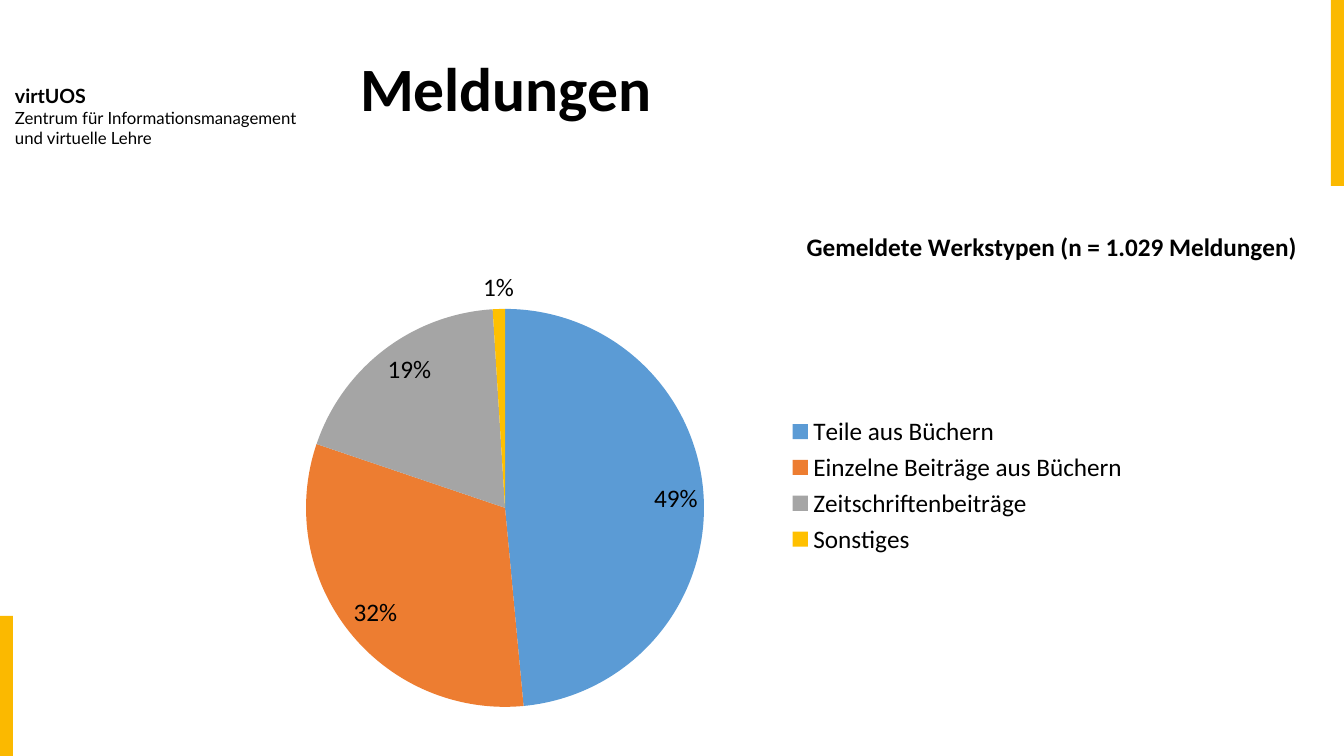
from dataclasses import dataclass

import pptx
import pptx.chart.chart
import pptx.chart.data
import pptx.dml.color
import pptx.enum.chart
import pptx.enum.shapes
import pptx.enum.text
import pptx.oxml
import pptx.oxml.ns
import pptx.slide
import pptx.util

EMU_PER_PX = 914400 / 100.8
BLACK = pptx.dml.color.RGBColor(0x00, 0x00, 0x00)
ACCENT = pptx.dml.color.RGBColor(0xFB, 0xB9, 0x00)
BLUE = pptx.dml.color.RGBColor(0x5B, 0x9B, 0xD5)
ORANGE = pptx.dml.color.RGBColor(0xED, 0x7D, 0x31)
GRAY = pptx.dml.color.RGBColor(0xA5, 0xA5, 0xA5)
YELLOW = pptx.dml.color.RGBColor(0xFF, 0xC0, 0x00)


@dataclass(frozen=True)
class Box:
    left: int
    top: int
    width: int
    height: int

    def emu(self) -> list[pptx.util.Emu]:
        return [px(v) for v in (self.left, self.top, self.width, self.height)]


@dataclass(frozen=True)
class WorkType:
    label: str
    share: float
    color: pptx.dml.color.RGBColor


WORK_TYPES = [
    WorkType("Teile aus Büchern", 0.49, BLUE),
    WorkType("Einzelne Beiträge aus Büchern", 0.32, ORANGE),
    WorkType("Zeitschriftenbeiträge", 0.19, GRAY),
    WorkType("Sonstiges", 0.01, YELLOW),
]
ACCENT_BARS = [Box(1331, 0, 13, 186), Box(0, 616, 13, 140)]
HEADING = Box(350, 19, 948, 146)
DEPARTMENT = Box(5, 79, 345, 75)
CHART = Box(49, 198, 1265, 523)
PIE = Box(306, 309, 398, 398)
PIE_TITLE = Box(802, 225, 0, 0)
LEGEND = Box(785, 411, 345, 149)


def px(value: int) -> pptx.util.Emu:
    return pptx.util.Emu(round(value * EMU_PER_PX))


def style_font(font, *, size: int, bold: bool = False, name: str = "Calibri") -> None:
    font.size = pptx.util.Pt(size)
    font.bold = bold
    font.name = name
    font.color.rgb = BLACK


def write(paragraph, text: str, *, line_spacing: float = 1.0, **font_format) -> None:
    paragraph.text = text
    paragraph.alignment = pptx.enum.text.PP_ALIGN.LEFT
    paragraph.line_spacing = line_spacing
    for run in paragraph.runs:
        style_font(run.font, **font_format)


def draw_accent_bar(slide: pptx.slide.Slide, box: Box) -> None:
    bar = slide.shapes.add_shape(pptx.enum.shapes.MSO_SHAPE.RECTANGLE, *box.emu())
    bar.shadow.inherit = False
    bar.fill.solid()
    bar.fill.fore_color.rgb = ACCENT
    bar.line.fill.background()


def draw_department(slide: pptx.slide.Slide) -> None:
    department = slide.shapes.add_textbox(*DEPARTMENT.emu()).text_frame
    department.word_wrap = True
    write(department.paragraphs[0], "virtUOS", size=14, bold=True, name="Lato")
    write(department.add_paragraph(),
          "Zentrum für Informationsmanagement\vund virtuelle Lehre", size=12, name="Lato")


def draw_heading(slide: pptx.slide.Slide) -> None:
    heading = slide.shapes.title
    heading.left, heading.top, heading.width, heading.height = HEADING.emu()
    frame = heading.text_frame
    frame.word_wrap = True
    frame.auto_size = pptx.enum.text.MSO_AUTO_SIZE.NONE
    frame.vertical_anchor = pptx.enum.text.MSO_ANCHOR.MIDDLE
    write(frame.paragraphs[0], "Meldungen", line_spacing=0.9, size=44, bold=True)


def place_in_chart(chart: pptx.chart.chart.Chart, tag: str, box: Box, index: int) -> None:
    part = chart._chartSpace.xpath(f".//{tag}")[0]
    for old_layout in part.xpath("./c:layout"):
        part.remove(old_layout)
    fractions = {
        "x": (box.left - CHART.left) / CHART.width,
        "y": (box.top - CHART.top) / CHART.height,
    }
    if box.width:
        fractions |= {"w": box.width / CHART.width, "h": box.height / CHART.height}
    target = '<c:layoutTarget val="inner"/>' if tag == "c:plotArea" else ""
    values = "".join(f'<c:{key} val="{value:.4f}"/>' for key, value in fractions.items())
    part.insert(index, pptx.oxml.parse_xml(
        f'<c:layout {pptx.oxml.ns.nsdecls("c")}><c:manualLayout>{target}'
        f'<c:xMode val="edge"/><c:yMode val="edge"/>{values}</c:manualLayout></c:layout>'))


def draw_work_types(slide: pptx.slide.Slide) -> None:
    shares = pptx.chart.data.CategoryChartData(number_format="0%")
    shares.categories = [work.label for work in WORK_TYPES]
    shares.add_series("Series 1", [work.share for work in WORK_TYPES])
    chart = slide.shapes.add_chart(
        pptx.enum.chart.XL_CHART_TYPE.PIE, *CHART.emu(), shares).chart
    style_font(chart.font, size=18)

    chart.has_title = True
    write(chart.chart_title.text_frame.paragraphs[0],
          "Gemeldete Werkstypen (n = 1.029 Meldungen)", size=18, bold=True)

    chart.has_legend = True
    chart.legend.position = pptx.enum.chart.XL_LEGEND_POSITION.RIGHT
    chart.legend.include_in_layout = False
    style_font(chart.legend.font, size=18)

    pie = chart.plots[0]
    pie.vary_by_categories = True
    series = pie.series[0]
    for index, work in enumerate(WORK_TYPES):
        fill = series.points[index].format.fill
        fill.solid()
        fill.fore_color.rgb = work.color

    labels = series.data_labels
    labels.show_value = True
    labels.show_percentage = False
    labels.number_format = "0%"
    labels.number_format_is_linked = False
    labels.position = pptx.enum.chart.XL_LABEL_POSITION.INSIDE_END
    style_font(labels.font, size=18)
    smallest = series.points[len(WORK_TYPES) - 1].data_label
    style_font(smallest.font, size=18)
    smallest.position = pptx.enum.chart.XL_LABEL_POSITION.OUTSIDE_END

    place_in_chart(chart, "c:plotArea", PIE, 0)
    place_in_chart(chart, "c:title", PIE_TITLE, 1)
    place_in_chart(chart, "c:legend", LEGEND, 1)


def main() -> None:
    presentation = pptx.Presentation()
    presentation.slide_width = px(1344)
    presentation.slide_height = px(756)
    slide = presentation.slides.add_slide(presentation.slide_layouts[5])
    for box in ACCENT_BARS:
        draw_accent_bar(slide, box)
    draw_department(slide)
    draw_heading(slide)
    draw_work_types(slide)
    presentation.save("out.pptx")


if __name__ == "__main__":
    main()
